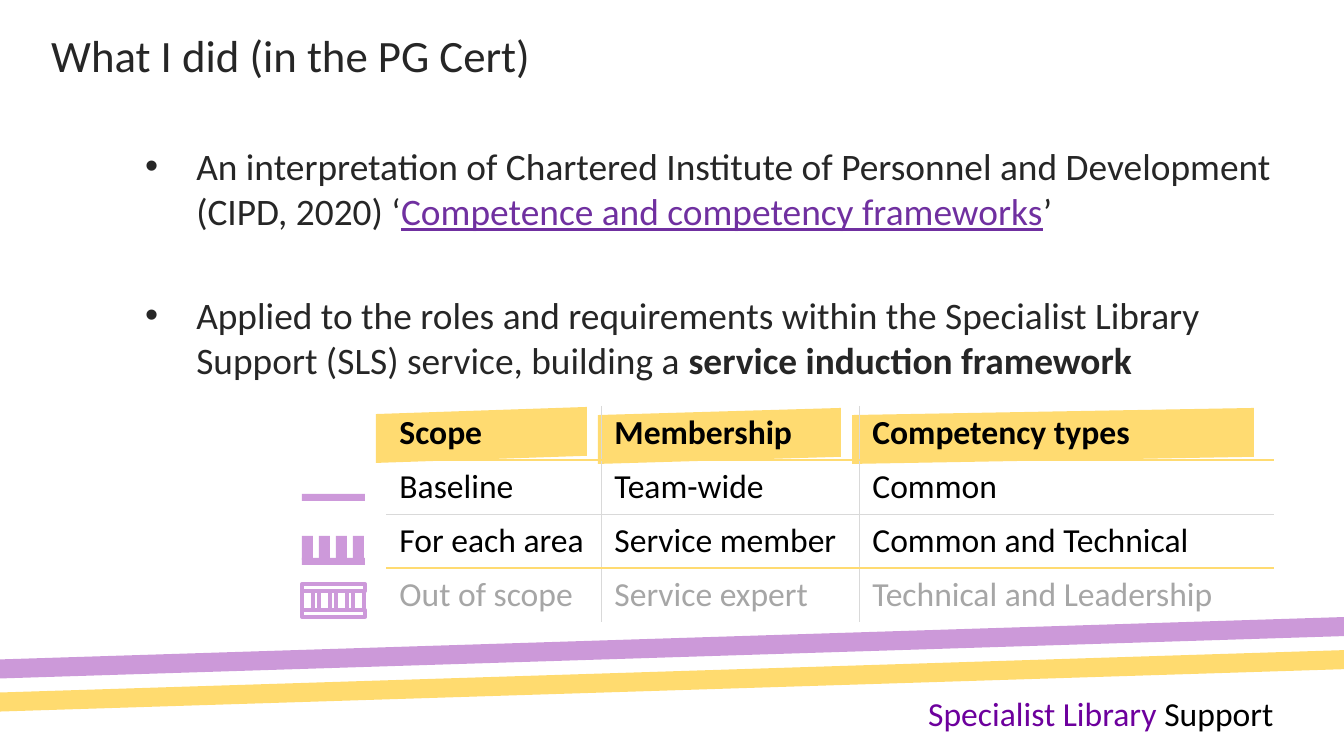
from lxml import etree
from pptx import Presentation
from pptx import util as u
from pptx.dml.color import RGBColor
from pptx.enum import shapes, text
from pptx.oxml import ns

PX = 914400 / 134.4
FONT = "Calibri"
BLACK = RGBColor(0x00, 0x00, 0x00)
WHITE = RGBColor(0xFF, 0xFF, 0xFF)
INK = RGBColor(0x26, 0x26, 0x26)
FADED = RGBColor(0xA6, 0xA6, 0xA6)
RULE = RGBColor(0xD9, 0xD9, 0xD9)
YELLOW = RGBColor(0xFF, 0xDB, 0x71)
LILAC = RGBColor(0xCD, 0x99, 0xDA)
LINK = RGBColor(0x70, 0x30, 0xA0)
BRAND = RGBColor(0x6D, 0x00, 0x9D)
BAND_PURPLE = RGBColor(0x81, 0x00, 0xA2)
BAND_YELLOW = RGBColor(0xFF, 0xCC, 0x33)

COLS = [215, 258, 415]
ROWS = [
    ["Scope", "Membership", "Competency types"],
    ["Baseline", "Team-wide", "Common"],
    ["For each area", "Service member", "Common and Technical"],
    ["Out of scope", "Service expert", "Technical and Leadership"],
]


def px(n):
    return u.Emu(round(n * PX))


def add_run(p, words, size, color, bold=False, underline=False):
    r = p.add_run()
    r.text = words
    f = r.font
    f.name, f.size, f.bold, f.underline = FONT, u.Pt(size), bold, underline
    f.color.rgb = color


def add_box(s, x, y, w, h):
    tf = s.shapes.add_textbox(px(x), px(y), px(w), px(h)).text_frame
    tf.word_wrap = True
    return tf


def add_shape(s, kind, x, y, w, h, fill, line=None):
    sp = s.shapes.add_shape(kind, px(x), px(y), px(w), px(h))
    sp.shadow.inherit = False
    sp.fill.solid()
    sp.fill.fore_color.rgb = fill
    if line is None:
        sp.line.fill.background()
    else:
        sp.line.color.rgb = line
        sp.line.width = u.Pt(2)
    return sp


def add_band(s, x, y, color, alpha):
    """Slanted stripe whose upper left corner is at x, y."""
    fb = s.shapes.build_freeform(x, y, scale=PX)
    fb.add_line_segments([(x + 1520, y - 48), (x + 1522, y - 29), (x, y + 19)])
    sp = fb.convert_to_shape()
    sp.shadow.inherit = False
    sp.line.fill.background()
    sp.fill.solid()
    sp.fill.fore_color.rgb = color
    clr = sp.fill._xPr.find(".//" + ns.qn("a:srgbClr"))
    etree.SubElement(clr, ns.qn("a:alpha")).set("val", str(alpha * 1000))


def add_footer(s, x, y, w, h):
    p = add_box(s, x, y, w, h).paragraphs[0]
    add_run(p, "Specialist Library ", 18, BRAND)
    add_run(p, "Support", 18, BLACK)


def add_title(s, x, y, w, h):
    p = add_box(s, x, y, w, h).paragraphs[0]
    add_run(p, "What I did (in the PG Cert)", 24, INK)


def add_bullets(s, x, y, w, h):
    tf = add_box(s, x, y, w, h)
    bullets = [
        [("An interpretation of Chartered Institute of Personnel and Development (CIPD, 2020) ‘", INK),
         ("Competence and competency frameworks", LINK, False, True),
         ("’", INK)],
        [("Applied to the roles and requirements within the Specialist Library Support (SLS) service, building a ", INK),
         ("service induction framework", INK, True)],
    ]
    for i, runs in enumerate(bullets):
        p = tf.add_paragraph() if i else tf.paragraphs[0]
        pPr = p._p.get_or_add_pPr()
        pPr.set("marL", str(px(51)))
        pPr.set("indent", str(px(-51)))
        etree.SubElement(pPr, ns.qn("a:buFont")).set("typeface", "Arial")
        etree.SubElement(pPr, ns.qn("a:buChar")).set("char", "•")
        if i:
            p.space_before = u.Pt(31.5)
        for words, *style in runs:
            add_run(p, words, 20, *style)


def add_header_tab(s, x, y, w, h):
    """Parallelogram turned on its side, rising to the right."""
    sp = add_shape(s, shapes.MSO_SHAPE.PARALLELOGRAM,
                   x + (w - h) / 2, y + (h - w) / 2, h, w, YELLOW)
    sp.adjustments[0] = 0.127
    sp.rotation = 90
    sp._element.spPr.xfrm.set("flipV", "1")


def set_border(cell, side, color=None, width=1):
    ln = etree.SubElement(cell._tc.get_or_add_tcPr(), ns.qn("a:ln" + side))
    if color is None:
        etree.SubElement(ln, ns.qn("a:noFill"))
        return
    ln.set("w", str(u.Pt(width)))
    fill = etree.SubElement(ln, ns.qn("a:solidFill"))
    etree.SubElement(fill, ns.qn("a:srgbClr")).set("val", str(color))


def add_framework(s, x, y, row_h):
    tbl = s.shapes.add_table(len(ROWS), len(COLS), px(x), px(y),
                             px(sum(COLS)), px(row_h * len(ROWS))).table
    tbl.first_row = tbl.horz_banding = False
    for col, w in zip(tbl.columns, COLS):
        col.width = px(w)
    # rules below each row, and between columns
    below = [(YELLOW, 1), (RULE, 0.5), (YELLOW, 1), (None,)]
    between = [(None,), (RULE, 0.5), (RULE, 0.5), (None,)]
    for i, row in enumerate(ROWS):
        tbl.rows[i].height = px(row_h)
        for j, words in enumerate(row):
            cell = tbl.cell(i, j)
            set_border(cell, "L", *between[j])
            set_border(cell, "R", *between[j + 1])
            set_border(cell, "T", *below[i - 1])
            set_border(cell, "B", *below[i])
            cell.fill.background()
            color = FADED if i == len(ROWS) - 1 else BLACK
            add_run(cell.text_frame.paragraphs[0], words, 18, color, bold=i == 0)


def add_track(s, x, y, bar_y=None, rails=(0,), fill=LILAC, line=None):
    """Row icon: four upright bars if bar_y is given, then the rails."""
    rect = shapes.MSO_SHAPE.RECTANGLE
    if bar_y is not None:
        for i in range(4):
            add_shape(s, rect, x + 17 * i, y + bar_y, 11, 24, fill, line)
    for rail_y in rails:
        add_shape(s, rect, x, y + rail_y, 63, 7, fill, line)


def main():
    prs = Presentation()
    prs.slide_width, prs.slide_height = px(1344), px(756)
    s = prs.slides.add_slide(prs.slide_layouts[6])

    # Bands and footer
    add_band(s, -46, 661, BAND_PURPLE, 40)
    add_band(s, -76, 695, BAND_YELLOW, 70)
    add_footer(s, 915, 686, 391, 54)

    # Title and bullets
    add_title(s, 38, 21, 1048, 74)
    add_bullets(s, 132, 137, 1174, 260)

    # Framework table over its header tabs
    add_header_tab(s, 376, 407, 211, 56)
    add_header_tab(s, 598, 408, 243, 56)
    add_header_tab(s, 852, 408, 402, 56)
    add_framework(s, 386, 406, 54)

    # Row icons
    add_track(s, 302, 494)
    add_track(s, 302, 536, bar_y=0, rails=(22,))
    add_track(s, 302, 584, bar_y=5, rails=(26, 0), fill=WHITE, line=LILAC)

    prs.save("out.pptx")


if __name__ == "__main__":
    main()
